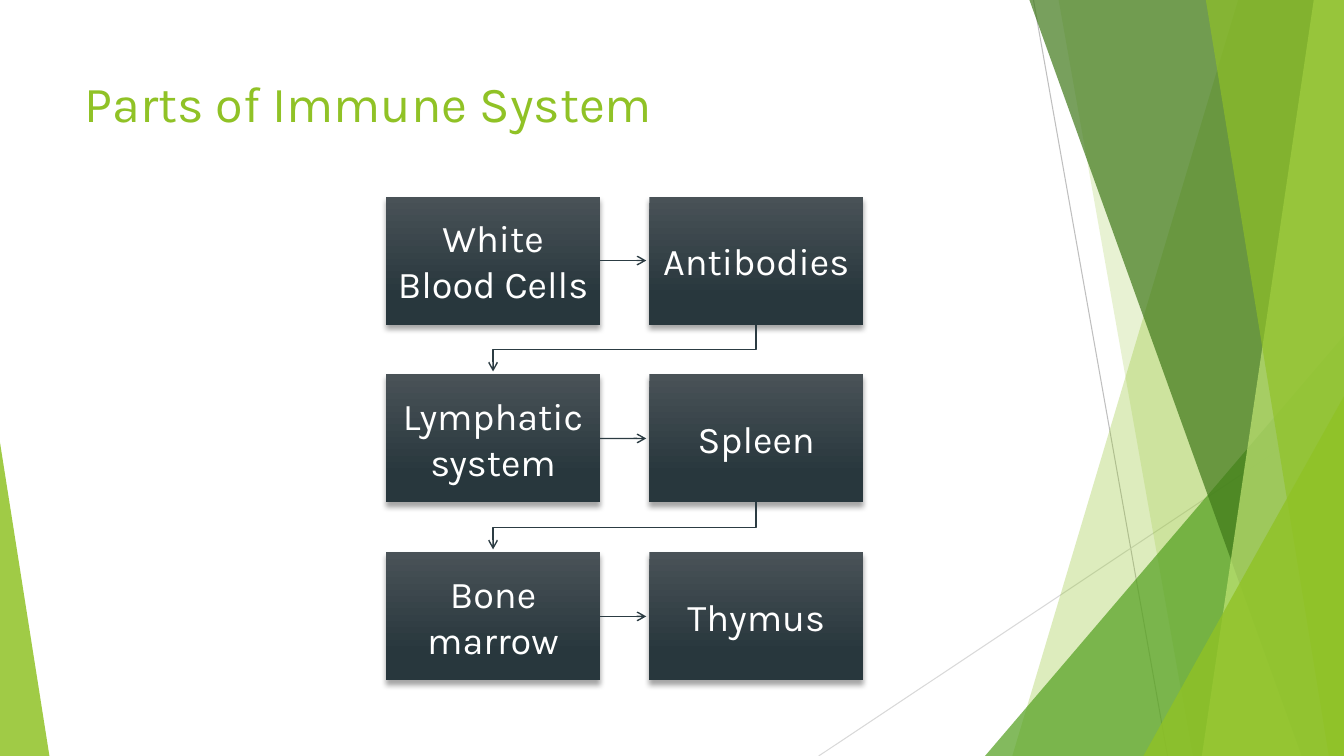
from lxml import etree
from pptx import Presentation
from pptx.dml.color import RGBColor
from pptx.enum.shapes import MSO_CONNECTOR, MSO_SHAPE
from pptx.enum.text import MSO_ANCHOR, PP_ALIGN
from pptx.oxml.ns import qn
from pptx.util import Inches, Pt

STRAIGHT = MSO_CONNECTOR.STRAIGHT
RECTANGLE = MSO_SHAPE.RECTANGLE
TRIANGLE = MSO_SHAPE.ISOSCELES_TRIANGLE
LEFT, CENTER = PP_ALIGN.LEFT, PP_ALIGN.CENTER
TOP, MIDDLE = MSO_ANCHOR.TOP, MSO_ANCHOR.MIDDLE
TITLE_ONLY = 5
RIGHT_SIDE = 3

WIDTH, HEIGHT = 13.33, 7.5
LIME, GREEN, FOREST, PALE = "90C226", "54A021", "3F7819", "C0E474"
ARROW, WHITE = "2C3C43", "FFFFFF"
GRADIENT = [(0, "495257"), (0.78, "28373D")]

# Left x at the top edge, left x at the bottom edge, colour, opacity
BAND_BACK = [(12.28, 10.04, LIME, 30), (10.5, 11.83, LIME, 20)]
BAND_FRONT = [(10.21, 12.91, FOREST, 70), (13.03, 11.92, PALE, 70), (11.96, 13.18, LIME, 65)]

PARTS = [
    ("White Blood Cells", "Antibodies"),
    ("Lymphatic system", "Spleen"),
    ("Bone marrow", "Thymus"),
]
BOX_LEFT, BOX_TOP = 3.83, 1.95
BOX_WIDTH, BOX_HEIGHT = 2.12, 1.27
COLUMN_STEP, ROW_STEP = 2.61, 1.765
ARROW_GAP = 0.03


def color(value):
    return RGBColor.from_string(value)


def add_xml(parent, tag, **attributes):
    names = {name: str(value) for name, value in attributes.items()}
    return etree.SubElement(parent, qn(tag), names)


class SlideBuilder:
    def __init__(self, page, font):
        self.page = page
        self.font = font

    def text(self, frame, words, size, hex_color, align, settings):
        for name, value in settings.items():
            setattr(frame, name, value)
        para = frame.paragraphs[0]
        para.alignment = align
        span = para.add_run()
        span.text = words
        for name, value in {"name": self.font, "size": Pt(size)}.items():
            setattr(span.font, name, value)
        span.font.color.rgb = color(hex_color)

    def title(self, words, left, top, width, height):
        box = self.page.shapes.title
        place = {"left": left, "top": top, "width": width, "height": height}
        for name, value in place.items():
            setattr(box, name, Inches(value))
        self.text(box.text_frame, words, 36, LIME, LEFT,
                  {"vertical_anchor": TOP, "word_wrap": True})

    def tint(self, shape, hex_color, opacity):
        """Fill a decoration with a translucent colour, without outline or shadow."""
        shape.shadow.inherit = False
        shape.line.fill.background()
        shape.fill.solid()
        shape.fill.fore_color.rgb = color(hex_color)
        tone = next(shape._element.spPr.iter(qn("a:srgbClr")))
        add_xml(tone, "a:alpha", val=opacity * 1000)

    def outline(self, points, close):
        corners = [(Inches(x), Inches(y)) for x, y in points]
        builder = self.page.shapes.build_freeform(*corners[0], scale=1.0)
        builder.add_line_segments(corners[1:], close=close)
        return builder.convert_to_shape()

    def band(self, top_x, bottom_x, hex_color, opacity):
        """Draw a band that reaches from a slanted edge to the right of the slide."""
        points = [(top_x, 0), (WIDTH, 0), (WIDTH, HEIGHT), (bottom_x, HEIGHT)]
        self.tint(self.outline(points, True), hex_color, opacity)

    def triangle(self, left, top, width, apex, hex_color, opacity):
        shape = self.page.shapes.add_shape(
            TRIANGLE, Inches(left), Inches(top), Inches(width), Inches(HEIGHT - top))
        shape.adjustments[0] = apex
        self.tint(shape, hex_color, opacity)

    def line(self, start, end, hex_color, width):
        connector = self.page.shapes.add_connector(
            STRAIGHT, *(Inches(value) for value in (*start, *end)))
        connector.line.color.rgb = color(hex_color)
        connector.line.width = Pt(width)
        add_xml(connector._element.spPr, "a:effectLst")
        return connector

    def arrowhead(self, shape):
        add_xml(shape._element.spPr.find(qn("a:ln")), "a:tailEnd", type="arrow")

    def box(self, words, left, top):
        shape = self.page.shapes.add_shape(
            RECTANGLE, Inches(left), Inches(top), Inches(BOX_WIDTH), Inches(BOX_HEIGHT))
        shape.line.fill.background()
        shape.fill.gradient()
        shape.fill.gradient_angle = 270
        for stop, (position, hex_color) in zip(shape.fill.gradient_stops, GRADIENT):
            stop.position = position
            stop.color.rgb = color(hex_color)
        shape.shadow.inherit = False
        effects = shape._element.spPr.find(qn("a:effectLst"))
        shadow = add_xml(effects, "a:outerShdw", blurRad=Pt(4), dist=Pt(3),
                         dir=5400000, rotWithShape=0)
        add_xml(add_xml(shadow, "a:srgbClr", val="000000"), "a:alpha", val=35000)
        self.text(shape.text_frame, words, 27, WHITE, CENTER, {
            "word_wrap": True, "vertical_anchor": MIDDLE,
            "margin_left": Inches(0.1), "margin_right": Inches(0.1),
            "margin_top": Inches(0.11), "margin_bottom": Inches(0.11)})
        return shape

    def arrow_across(self, box, top):
        middle = top + BOX_HEIGHT / 2
        start = BOX_LEFT + BOX_WIDTH
        end = BOX_LEFT + COLUMN_STEP - ARROW_GAP
        connector = self.line((start, middle), (end, middle), ARROW, 1)
        connector.begin_connect(box, RIGHT_SIDE)
        self.arrowhead(connector)

    def arrow_to_next_row(self, top):
        end_x = BOX_LEFT + BOX_WIDTH / 2
        start_x = end_x + COLUMN_STEP
        start_y = top + BOX_HEIGHT
        next_top = top + ROW_STEP
        bend_y = (start_y + next_top) / 2
        shape = self.outline([(start_x, start_y), (start_x, bend_y), (end_x, bend_y),
                              (end_x, next_top - ARROW_GAP)], False)
        shape.shadow.inherit = False
        shape.fill.background()
        shape.line.color.rgb = color(ARROW)
        shape.line.width = Pt(1)
        self.arrowhead(shape)


def main():
    deck = Presentation()
    deck.slide_width, deck.slide_height = Inches(WIDTH), Inches(HEIGHT)
    page = deck.slides.add_slide(deck.slide_layouts[TITLE_ONLY])
    builder = SlideBuilder(page, "Karla")

    builder.line((10.25, 0), (11.58, HEIGHT), "BFBFBF", 0.75)
    builder.line((WIDTH, 4.03), (8.12, HEIGHT), "D9D9D9", 0.75)
    for band in BAND_BACK:
        builder.band(*band)
    builder.triangle(9.77, 3.33, 3.56, 1, GREEN, 72)
    for band in BAND_FRONT:
        builder.band(*band)
    builder.triangle(11.34, 3.93, 1.99, 1, LIME, 80)
    builder.triangle(0, 4.39, 0.49, 0, LIME, 85)

    builder.title("Parts of Immune System", 0.74, 0.67, 9.4, 1.44)
    for row, names in enumerate(PARTS):
        top = BOX_TOP + row * ROW_STEP
        boxes = [builder.box(name, BOX_LEFT + column * COLUMN_STEP, top)
                 for column, name in enumerate(names)]
        builder.arrow_across(boxes[0], top)
        if row < len(PARTS) - 1:
            builder.arrow_to_next_row(top)

    deck.save("out.pptx")


if __name__ == "__main__":
    main()
